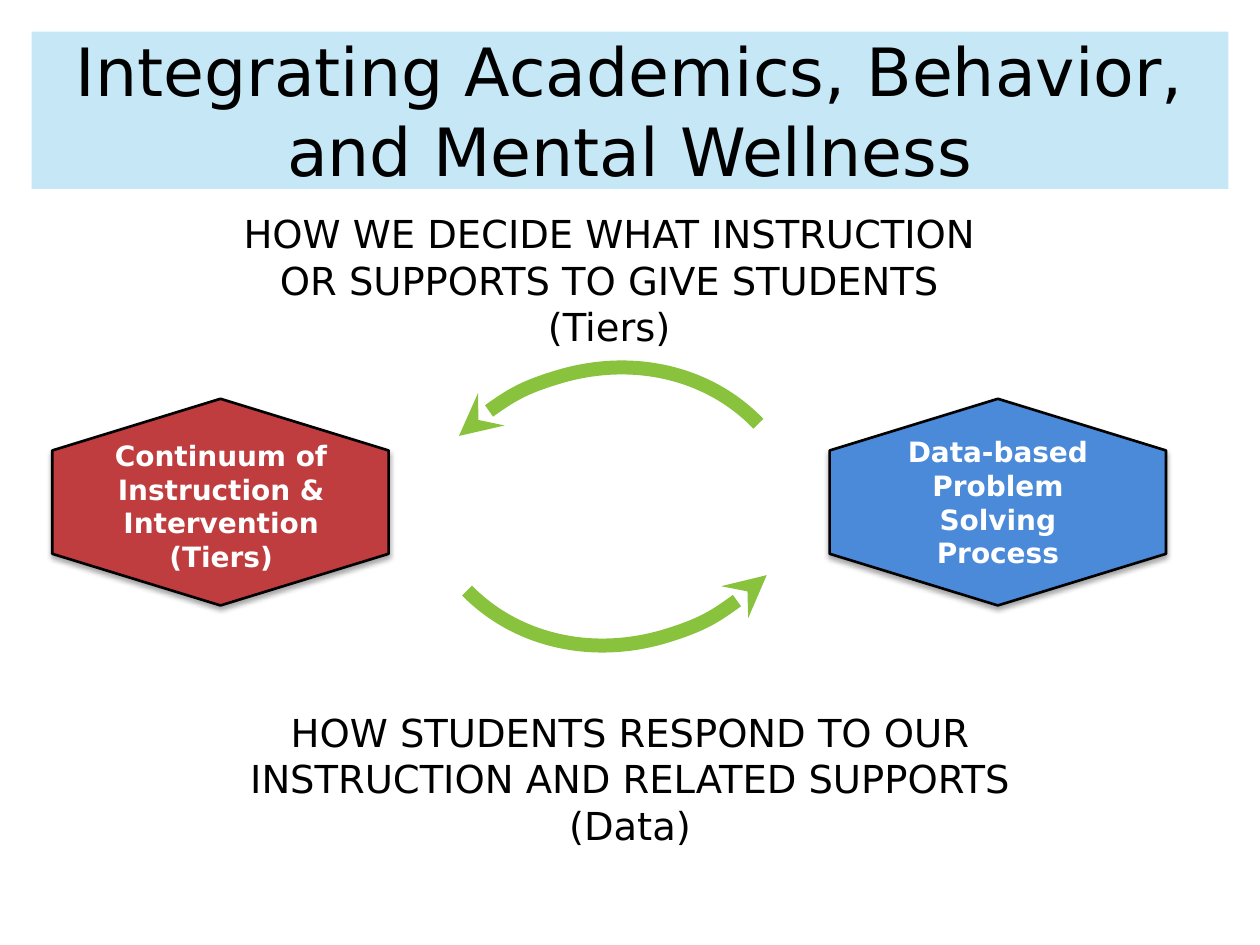
from dataclasses import dataclass

from lxml.etree import SubElement
from pptx import Presentation
from pptx.dml.color import RGBColor
from pptx.enum.shapes import MSO_SHAPE
from pptx.enum.text import MSO_ANCHOR, MSO_AUTO_SIZE, PP_ALIGN
from pptx.oxml.ns import qn
from pptx.shapes.autoshape import Shape
from pptx.shapes.group import GroupShape
from pptx.util import Inches, Pt

FONT = "DejaVu Sans"
COLORS = {
    "banner": "A9DCF2",
    "text": "000000",
    "label": "FFFFFF",
    "outline": "000000",
    "arrow": "89C33D",
    "tiers": "BF3D3E",
    "data": "4A8AD9",
}


@dataclass
class Frame:
    left: float
    top: float
    width: float
    height: float

    def lengths(self) -> list[int]:
        return [Inches(n) for n in (self.left, self.top, self.width, self.height)]


@dataclass
class Concept:
    frame: Frame
    color: str
    label: str
    label_frame: Frame
    inset: float


@dataclass
class CycleArrow:
    frame: Frame
    rotation: float


TIERS = Concept(Frame(0.93, 2.65, 1.64, 2.67), "tiers",
                "Continuum of Instruction & Intervention (Tiers)",
                Frame(0.75, 3.47, 2.01, 1.09), 0.1)
DATA = Concept(Frame(7.1, 2.65, 1.64, 2.67), "data",
               "Data-based Problem Solving Process",
               Frame(7.03, 3.44, 1.78, 1.09), 0.05)
TOP_ARROW = CycleArrow(Frame(2.98, 3.01, 3.53, 3.15), 316.2)
BOTTOM_ARROW = CycleArrow(Frame(3.2, 1.87, 3.53, 3.16), 135.5)


def rgb(name: str) -> RGBColor:
    return RGBColor.from_string(COLORS[name])


def place(shape: Shape, frame: Frame) -> None:
    shape.left, shape.top, shape.width, shape.height = frame.lengths()


def write(shape: Shape, text: str, size: float, color: str = "text", bold: bool = False,
          anchor: MSO_ANCHOR = MSO_ANCHOR.TOP, inset: float = 0.05) -> None:
    """Fill a shape with one centred, wrapped paragraph."""
    box = shape.text_frame
    box.text = text
    box.word_wrap = True
    box.auto_size = MSO_AUTO_SIZE.NONE
    box.vertical_anchor = anchor
    box.margin_left = box.margin_right = Inches(0.1)
    box.margin_top = box.margin_bottom = Inches(inset)
    para = box.paragraphs[0]
    para.alignment = PP_ALIGN.CENTER
    para.space_before = Pt(0)
    para.font.name = FONT
    para.font.size = Pt(size)
    para.font.bold = bold
    para.font.color.rgb = rgb(color)


def remove_bullet(shape: Shape) -> None:
    properties = shape.text_frame.paragraphs[0]._p.get_or_add_pPr()
    properties.set("marL", "0")
    properties.set("indent", "0")
    bullet = SubElement(properties, qn("a:buNone"))
    default_run = properties.find(qn("a:defRPr"))
    if default_run is not None:
        default_run.addprevious(bullet)


def add_soft_shadow(shape: Shape) -> None:
    effects = SubElement(shape._element.spPr, qn("a:effectLst"))
    shadow = SubElement(effects, qn("a:outerShdw"), blurRad=str(Pt(3.1)),
                        dist=str(Pt(1.8)), dir="5400000", rotWithShape="0")
    color = SubElement(shadow, qn("a:srgbClr"), val=COLORS["outline"])
    SubElement(color, qn("a:alpha"), val="35000")


def add_arrow(group: GroupShape, arrow: CycleArrow) -> None:
    arc = group.shapes.add_shape(MSO_SHAPE.ARC, *arrow.frame.lengths())
    arc.adjustments[0] = 161.626
    arc.adjustments[1] = 0
    arc.rotation = arrow.rotation
    arc.shadow.inherit = False
    arc.fill.background()
    arc.line.color.rgb = rgb("arrow")
    arc.line.width = Pt(8)
    SubElement(arc.line._get_or_add_ln(), qn("a:headEnd"), type="stealth")


def add_concept(group: GroupShape, concept: Concept) -> None:
    hexagon = group.shapes.add_shape(MSO_SHAPE.HEXAGON, *concept.frame.lengths())
    hexagon.adjustments[0] = 0.25
    hexagon.rotation = 270
    hexagon.fill.solid()
    hexagon.fill.fore_color.rgb = rgb(concept.color)
    hexagon.line.color.rgb = rgb("outline")
    hexagon.line.width = Pt(1.5)
    add_soft_shadow(hexagon)
    label = group.shapes.add_textbox(*concept.label_frame.lengths())
    write(label, concept.label, 16, "label", True, MSO_ANCHOR.MIDDLE, concept.inset)


def main() -> None:
    deck = Presentation()
    deck.slide_width, deck.slide_height = Inches(10), Inches(7.5)
    page = deck.slides.add_slide(deck.slide_layouts[1])

    title = page.shapes.title
    place(title, Frame(0.25, 0.25, 9.5, 1.25))
    title.fill.solid()
    title.fill.fore_color.rgb = rgb("banner")
    banner_color = title._element.spPr.find(".//" + qn("a:srgbClr"))
    SubElement(banner_color, qn("a:alpha"), val="67000")
    write(title, "Integrating Academics, Behavior, and Mental Wellness", 38,
          anchor=MSO_ANCHOR.MIDDLE)

    decision = page.placeholders[1]
    place(decision, Frame(1.73, 1.62, 6.21, 1.09))
    write(decision, "HOW WE DECIDE WHAT INSTRUCTION OR SUPPORTS TO GIVE STUDENTS (Tiers)", 22)
    remove_bullet(decision)

    cycle = page.shapes.add_group_shape()
    for arrow, concept in ((TOP_ARROW, TIERS), (BOTTOM_ARROW, DATA)):
        add_arrow(cycle, arrow)
        add_concept(cycle, concept)

    response = page.shapes.add_textbox(*Frame(1.82, 5.58, 6.36, 1.09).lengths())
    write(response, "HOW STUDENTS RESPOND TO OUR INSTRUCTION AND RELATED SUPPORTS (Data)", 22)

    deck.save("out.pptx")


if __name__ == "__main__":
    main()
